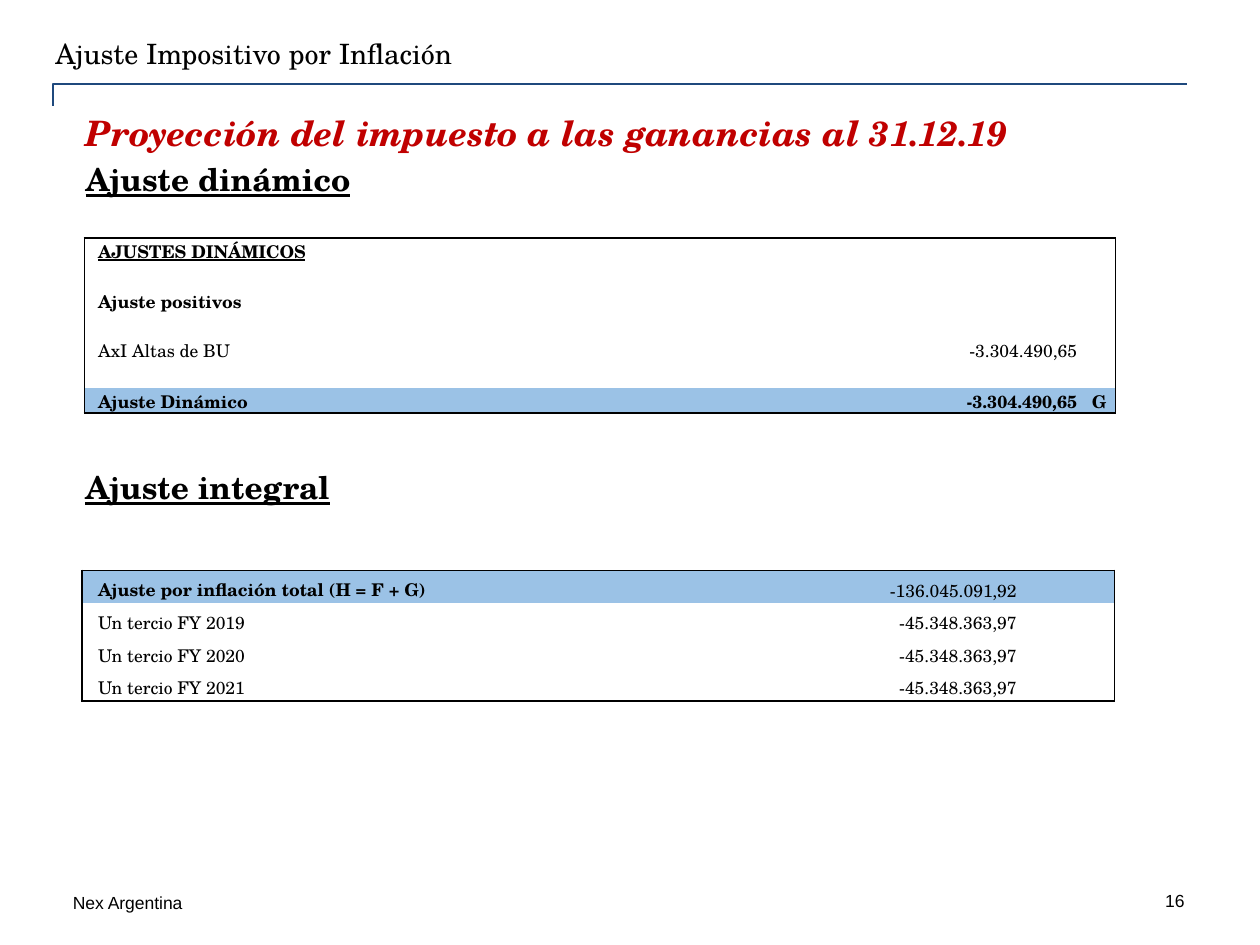
from lxml.etree import SubElement
from pptx import Presentation
from pptx.dml.color import RGBColor
from pptx.enum.shapes import MSO_CONNECTOR
from pptx.enum.text import MSO_ANCHOR, MSO_AUTO_SIZE, PP_ALIGN
from pptx.oxml import parse_xml
from pptx.oxml.ns import nsdecls, qn
from pptx.util import Cm, Pt

COLORS = {"black": "000000", "white": "FFFFFF", "red": "C00000",
          "navy": "1F497D", "band": "9BC2E6"}
SERIF, SANS = "TeX Gyre Schola", "Arial"


def write(para, text, font=SERIF, size=10, color="black", bold=False,
          italic=False, underline=False, align=PP_ALIGN.LEFT, before=0):
    """Add formatted text to a paragraph."""
    para.alignment = align
    para.space_before = Pt(before)
    span = para.add_run()
    span.text = text
    span.font.name = font
    span.font.size = Pt(size)
    span.font.bold = bold
    span.font.italic = italic
    span.font.underline = underline
    span.font.color.rgb = RGBColor.from_string(COLORS[color])


class SlideBuilder:
    def __init__(self, page):
        self.page = page

    def place(self, shape, left, top, width, height):
        shape.left, shape.top = Cm(left), Cm(top)
        shape.width, shape.height = Cm(width), Cm(height)

    def title(self, area, text, **style):
        box = self.page.shapes.title
        self.place(box, *area)
        box.text_frame.auto_size = MSO_AUTO_SIZE.NONE
        box.text_frame.vertical_anchor = MSO_ANCHOR.TOP
        write(box.text_frame.paragraphs[0], text, **style)

    def body(self, area, lines):
        box = self.page.placeholders[1]
        self.place(box, *area)
        frame = box.text_frame
        frame.auto_size = MSO_AUTO_SIZE.NONE
        for index, (text, style) in enumerate(lines):
            para = frame.add_paragraph() if index else frame.paragraphs[0]
            write(para, text, **style)
            props = para._p.get_or_add_pPr()
            props.set("marL", "0")
            props.set("indent", "0")
            SubElement(props, qn("a:buNone"))

    def text(self, area, text, wrap=True, inset=None, anchor=MSO_ANCHOR.TOP, **style):
        frame = self.page.shapes.add_textbox(*map(Cm, area)).text_frame
        frame.word_wrap = wrap
        frame.vertical_anchor = anchor
        if inset is not None:
            frame.margin_left = frame.margin_right = Cm(inset)
            frame.margin_top = frame.margin_bottom = Cm(inset)
        write(frame.paragraphs[0], text, **style)

    def corner_rule(self, left, top, width, drop):
        """Draw a rule with a short drop at its left end."""
        # The elbow is laid out upright about its centre, then turned a quarter.
        middle_x, middle_y = left + width / 2, top + drop / 2
        rule = self.page.shapes.add_connector(
            MSO_CONNECTOR.ELBOW,
            Cm(middle_x + drop / 2), Cm(middle_y + width / 2),
            Cm(middle_x - drop / 2), Cm(middle_y - width / 2))
        rule.line.color.rgb = RGBColor.from_string(COLORS["navy"])
        rule.line.width = Pt(1)
        props = rule.element.spPr
        props.find(qn("a:xfrm")).set("rot", str(90 * 60000))
        props.find(qn("a:prstGeom")).set("prst", "bentConnector2")
        SubElement(props, qn("a:effectLst"))

    def table(self, left, top, height, widths, row_count, entries, band_row, merge=None):
        """Build a framed table; entries maps (row, column) to text and style."""
        table = self.page.shapes.add_table(
            row_count, len(widths), Cm(left), Cm(top),
            Cm(sum(widths)), Cm(height)).table
        table.first_row = table.horz_banding = False
        for column, width in zip(table.columns, widths):
            column.width = Cm(width)
        for r, row in enumerate(table.rows):
            row.height = Cm(height / row_count)
            for c, cell in enumerate(row.cells):
                cell.fill.solid()
                fill = "band" if r == band_row else "white"
                cell.fill.fore_color.rgb = RGBColor.from_string(COLORS[fill])
                cell.vertical_anchor = MSO_ANCHOR.BOTTOM
                cell.margin_left = cell.margin_right = 0
                cell.margin_top = cell.margin_bottom = 0
                self.frame_cell(cell, L=c == 0, R=c == len(widths) - 1,
                                T=r == 0, B=r == row_count - 1)
                para = cell.text_frame.paragraphs[0]
                if (r, c) in entries:
                    text, style = entries[r, c]
                    write(para, text, **style)
                else:
                    SubElement(para._p, qn("a:endParaRPr")).set("sz", "1000")
        if merge:
            table.cell(*merge[0]).merge(table.cell(*merge[1]))

    def frame_cell(self, cell, **edges):
        """Draw the outer edges of a cell and clear the inner ones."""
        props = cell._tc.get_or_add_tcPr()
        for index, (side, shown) in enumerate(edges.items()):
            paint = (f'<a:solidFill><a:srgbClr val="{COLORS["black"]}"/></a:solidFill>'
                     if shown else "<a:noFill/>")
            props.insert(index, parse_xml(
                f'<a:ln{side} {nsdecls("a")} w="12700">{paint}</a:ln{side}>'))


def main():
    deck = Presentation()
    deck.slide_width, deck.slide_height = Cm(25.4), Cm(19.05)
    page = deck.slides.add_slide(deck.slide_layouts[1])
    builder = SlideBuilder(page)
    heading = dict(size=18, bold=True, underline=True)
    strong = dict(bold=True)
    amount = dict(align=PP_ALIGN.RIGHT)

    # Footer and header rule
    builder.text((1.47, 17.98, 7.19, 0.43), "Nex Argentina", inset=0, font=SANS)
    builder.corner_rule(1.07, 1.7, 22.86, 0.43)

    # Headings
    builder.body((1.47, 2.13, 22.43, 7.19), [
        ("Proyección del impuesto a las ganancias al 31.12.19",
         dict(size=20, color="red", bold=True, italic=True, before=4)),
        ("Ajuste dinámico", dict(heading, before=3.6)),
    ])
    builder.text((18.21, 17.65, 5.92, 1.02), "16", font=SANS,
                 align=PP_ALIGN.RIGHT, anchor=MSO_ANCHOR.MIDDLE)
    builder.title((0.86, 0.61, 23.01, 0.94), "Ajuste Impositivo por Inflación", size=16)
    builder.text((1.47, 9.32, 5.54, 1.02), "Ajuste integral", wrap=False, **heading)

    # Dynamic adjustment
    builder.table(
        1.7, 4.8, 3.53, [0.28, 6.12, 3.25, 3.33, 2.97, 4.06, 0.3, 0.48], 7,
        {(0, 1): ("AJUSTES DINÁMICOS", dict(bold=True, underline=True)),
         (2, 1): ("Ajuste positivos", strong),
         (4, 1): ("AxI Altas de BU", {}),
         (4, 5): ("-3.304.490,65", amount),
         (6, 1): ("Ajuste Dinámico", strong),
         (6, 5): ("-3.304.490,65", dict(amount, bold=True)),
         (6, 7): ("G", strong)},
        band_row=6)

    # Total adjustment, spread over three years
    thirds = {(0, 1): ("Ajuste por inflación total (H = F + G)", strong),
              (0, 5): ("-136.045.091,92", amount)}
    for row, year in enumerate(range(2019, 2022), start=1):
        thirds[row, 1] = (f"Un tercio FY {year}", {})
        thirds[row, 5] = ("-45.348.363,97", amount)
    builder.table(
        1.65, 11.5, 2.63, [0.33, 4.8, 2.54, 3.91, 3.51, 3.75, 1.42, 0.56], 4,
        thirds, band_row=0, merge=((0, 1), (0, 2)))

    deck.save("out.pptx")


if __name__ == "__main__":
    main()
